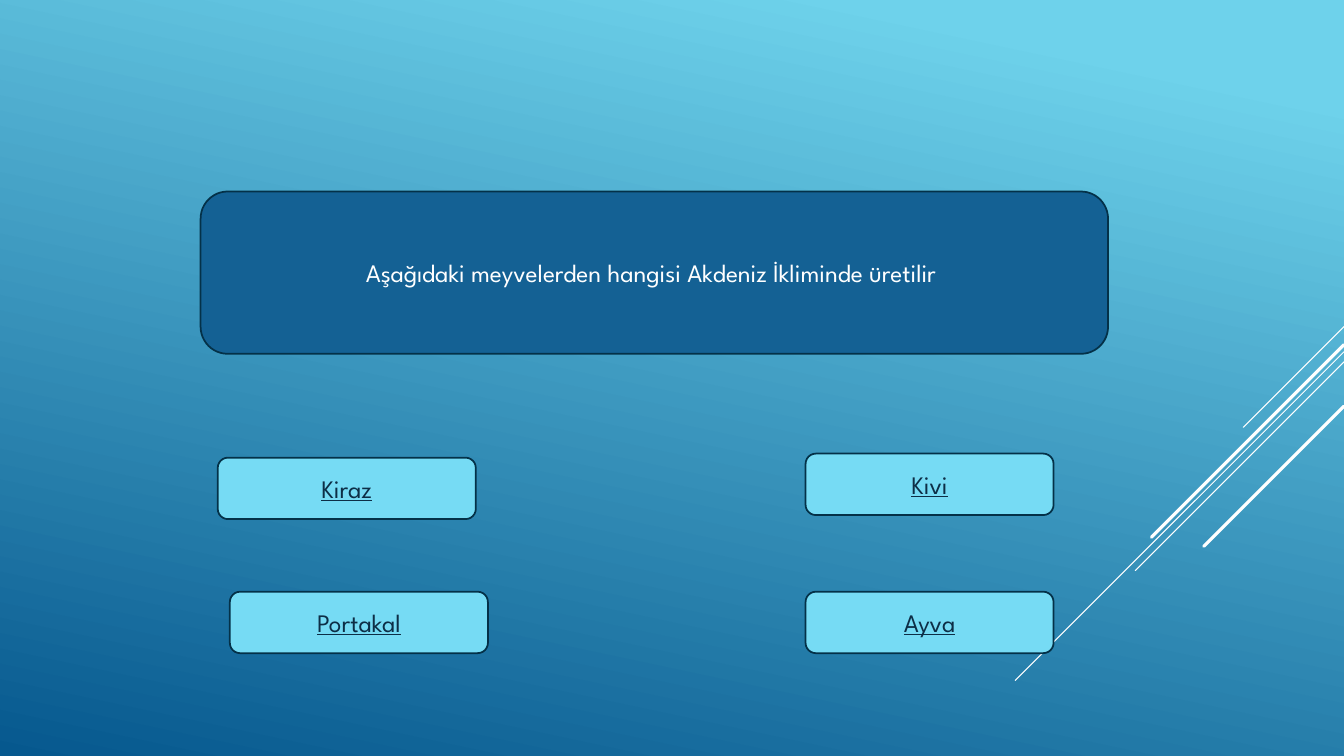
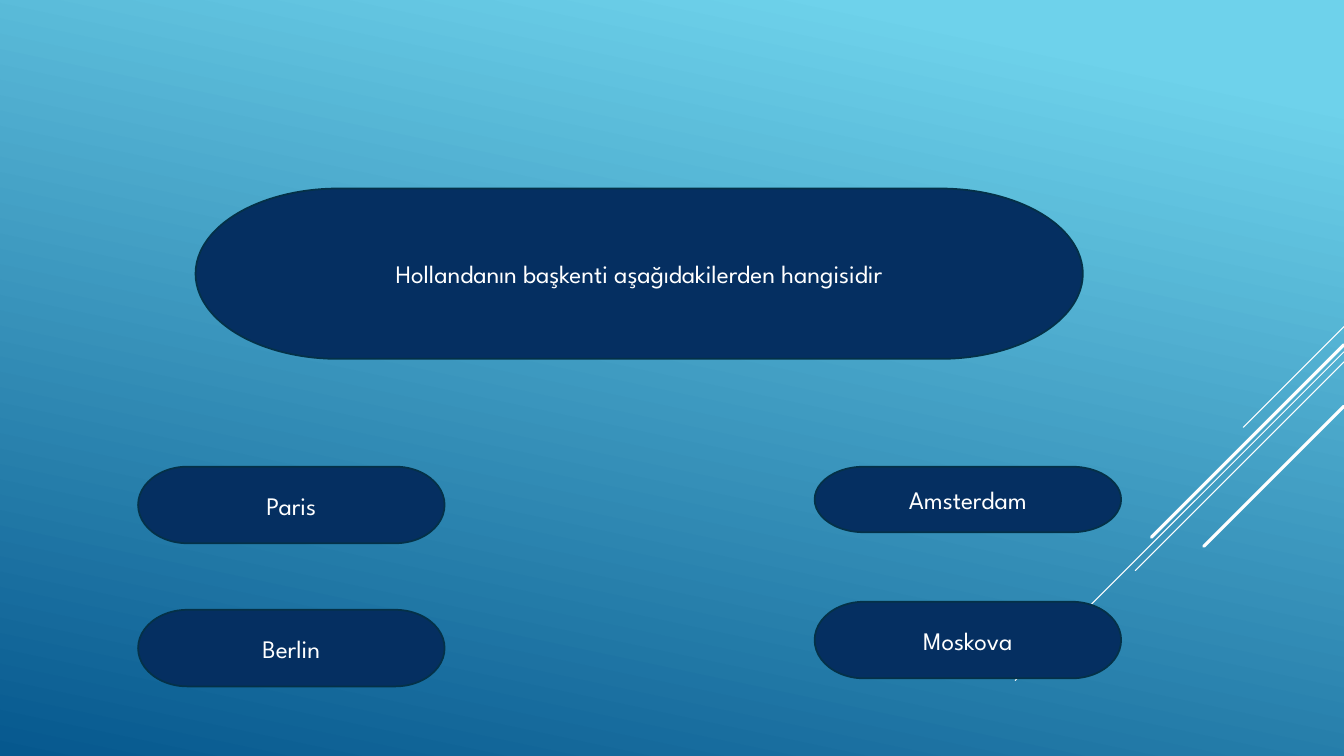
from lxml import etree
from pptx import Presentation
from pptx.dml.color import RGBColor
from pptx.enum.shapes import MSO_CONNECTOR as CONN, MSO_SHAPE as SHAPE
from pptx.enum.text import MSO_ANCHOR as ANCHOR, PP_ALIGN as ALIGN
from pptx.oxml.ns import qn
from pptx.util import Inches, Pt

FONT = "League Spartan"
WIDTH, HEIGHT = 13.33, 7.5
WHITE, OUTLINE, NAVY = "FFFFFF", "043148", "052F61"
BLUE, LIGHT_BLUE, DARK_TEXT = "146194", "76DBF4", "0D2E46"
GRADIENT = [(0.1, "6ED2EB"), (1, "06588E")]
STRIPES = [
    (3.24, 1, 0.75),
    (3.49, 3.26, 0.75),
    (3.59, 2.07, 0.75),
    (3.42, 1.91, 2.25),
    (4.03, 1.39, 2.25),
]


def rgb(color):
    """Turn a hex string into a colour."""
    return RGBColor.from_string(color)


def set_background(master):
    """Give the master the diagonal blue gradient."""
    fill = master.background.fill
    fill.gradient()
    fill.gradient_angle = 360 - 102
    for stop, (position, color) in zip(fill.gradient_stops, GRADIENT):
        stop.position = position
        stop.color.rgb = rgb(color)


def add_stripe(s, top, run, weight):
    """Draw a 45 degree line down from the right edge."""
    line = s.shapes.add_connector(
        CONN.STRAIGHT, Inches(WIDTH), Inches(top), Inches(WIDTH - run), Inches(top + run)
    )
    line.line.color.rgb = rgb(WHITE)
    line.line.width = Pt(weight)
    line.get_or_add_ln().set("cap", "rnd")
    etree.SubElement(line.element.spPr, qn("a:effectLst"))


def add_slide(prs):
    """Add a blank slide with the corner stripes."""
    s = prs.slides.add_slide(prs.slide_layouts[6])
    for stripe in STRIPES:
        add_stripe(s, *stripe)
    return s


def add_box(s, kind, text, at, fill, color=WHITE, underline=None):
    """Add an outlined shape with centred text."""
    sp = s.shapes.add_shape(kind, *map(Inches, at))
    sp.shadow.inherit = False
    sp.fill.solid()
    sp.fill.fore_color.rgb = rgb(fill)
    sp.line.color.rgb = rgb(OUTLINE)
    sp.line.width = Pt(1.25)
    tf = sp.text_frame
    tf.word_wrap = True
    tf.vertical_anchor = ANCHOR.MIDDLE
    p = tf.paragraphs[0]
    p.alignment = ALIGN.CENTER
    r = p.add_run()
    r.text = text
    r.font.name = FONT
    r.font.size = Pt(18)
    r.font.color.rgb = rgb(color)
    r.font.underline = underline


def fruit_slide(prs):
    """Build the question about fruit."""
    s = add_slide(prs)
    question = "Aşağıdaki meyvelerden hangisi Akdeniz İkliminde üretilir "
    add_box(s, SHAPE.ROUNDED_RECTANGLE, question, (1.99, 1.9, 9, 1.61), BLUE)
    for text, left, top, width in [
        ("Kiraz", 2.16, 4.54, 2.56),
        ("Kivi", 7.99, 4.5, 2.46),
        ("Portakal", 2.28, 5.87, 2.56),
        ("Ayva", 7.99, 5.87, 2.46),
    ]:
        at = (left, top, width, 0.61)
        add_box(s, SHAPE.ROUNDED_RECTANGLE, text, at, LIGHT_BLUE, DARK_TEXT, True)


def capital_slide(prs):
    """Build the question about the capital."""
    s = add_slide(prs)
    question = "Hollandanın başkenti aşağıdakilerden hangisidir"
    add_box(s, SHAPE.FLOWCHART_TERMINATOR, question, (1.94, 1.87, 8.8, 1.69), NAVY)
    for text, left, top, height in [
        ("Paris", 1.37, 4.63, 0.76),
        ("Amsterdam", 8.08, 4.63, 0.65),
        ("Berlin", 1.37, 6.05, 0.76),
        ("Moskova", 8.08, 5.97, 0.76),
    ]:
        add_box(s, SHAPE.FLOWCHART_TERMINATOR, text, (left, top, 3.04, height), NAVY)


def main():
    """Build and save the quiz."""
    prs = Presentation()
    prs.slide_width, prs.slide_height = Inches(WIDTH), Inches(HEIGHT)
    set_background(prs.slide_master)
    fruit_slide(prs)
    capital_slide(prs)
    prs.save("out.pptx")


if __name__ == "__main__":
    main()
